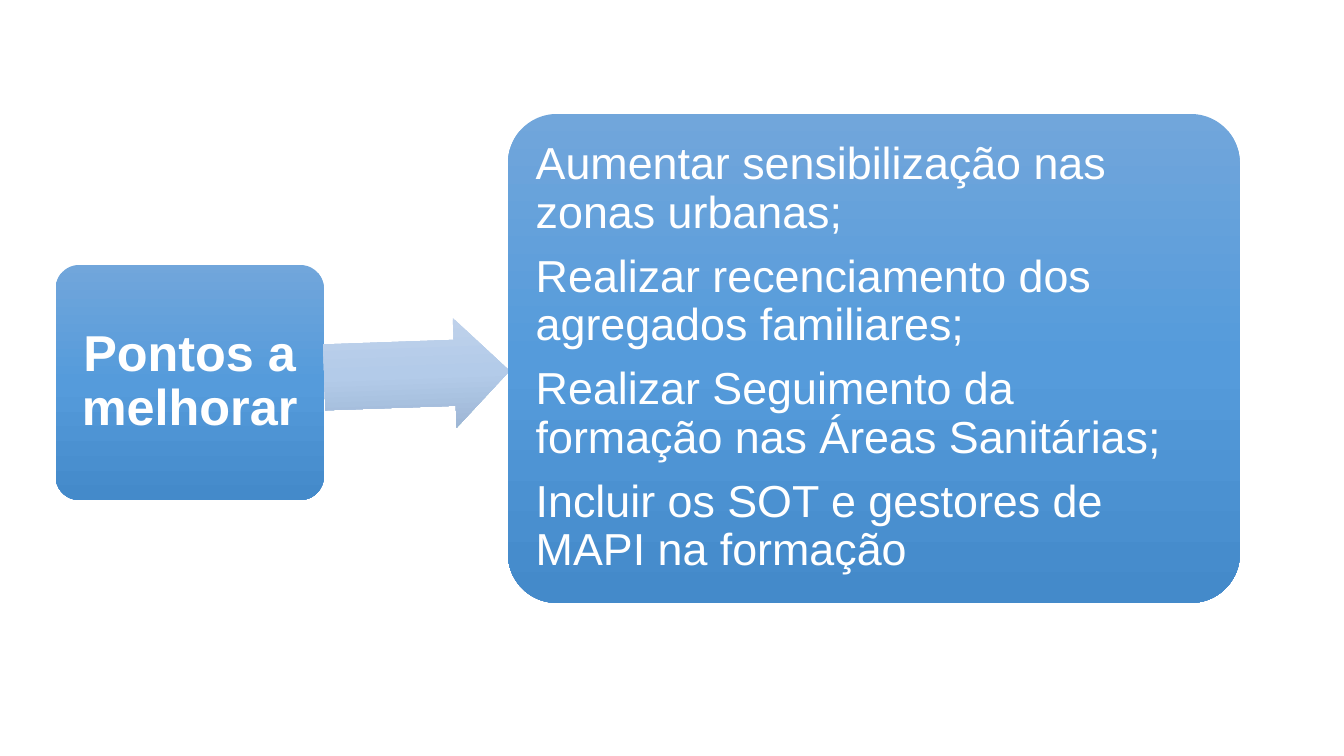
"""Build a slide that leads from a heading box to the points to improve."""
from copy import deepcopy

from pptx import Presentation
from pptx.dml.color import RGBColor
from pptx.enum.shapes import MSO_SHAPE
from pptx.enum.text import MSO_ANCHOR, PP_ALIGN
from pptx.oxml.ns import qn
from pptx.util import Pt

WHITE = RGBColor(0xFF, 0xFF, 0xFF)
BLUES = (RGBColor(0x71, 0xA6, 0xDB), RGBColor(0x55, 0x9B, 0xDB), RGBColor(0x44, 0x8A, 0xCA))
PALES = (RGBColor(0xC0, 0xD2, 0xEB), RGBColor(0xB3, 0xCB, 0xE9), RGBColor(0x9B, 0xB4, 0xD3))
POINTS = (
    "Aumentar sensibilização nas zonas urbanas;",
    "Realizar recenciamento dos agregados familiares;",
    "Realizar Seguimento da formação nas Áreas Sanitárias;",
    "Incluir os SOT e gestores de MAPI na formação",
)


def write(frame, lines, size, inset, bold=False, align=PP_ALIGN.LEFT):
    """Fill a text frame with one paragraph per line."""
    frame.word_wrap = True
    frame.vertical_anchor = MSO_ANCHOR.MIDDLE
    frame.margin_left = frame.margin_right = Pt(inset)
    frame.margin_top = frame.margin_bottom = Pt(inset)
    for i, line in enumerate(lines):
        para = frame.add_paragraph() if i else frame.paragraphs[0]
        para.alignment = align
        para.line_spacing = 0.9
        para.space_after = Pt(0.35 * size)
        run = para.add_run()
        run.text = line
        font = run.font
        font.name, font.size, font.bold = "Arial", Pt(size), bold
        font.color.rgb = WHITE


class Deck:
    """Hold the slide and the shared style of its shapes."""

    def __init__(self, slide):
        """Keep the current slide."""
        self.slide = slide

    def shape(self, kind, area, tones, adjust):
        """Add a borderless shape with a downward gradient."""
        item = self.slide.shapes.add_shape(kind, *map(Pt, area))
        item.shadow.inherit = False
        item.line.fill.background()
        for i, value in enumerate(adjust):
            item.adjustments[i] = value
        fill = item.fill
        fill.gradient()
        fill.gradient_angle = 270
        stops = item._element.spPr.find(qn("a:gradFill")).find(qn("a:gsLst"))
        stops.append(deepcopy(stops[-1]))
        for i, (stop, tone) in enumerate(zip(fill.gradient_stops, tones)):
            stop.position = i / 2
            stop.color.rgb = tone
        return item

    def box(self, area, lines, **style):
        """Add a rounded blue box with text."""
        item = self.shape(MSO_SHAPE.ROUNDED_RECTANGLE, area, BLUES, [0.1])
        write(item.text_frame, lines, **style)

    def arrow(self, area, turn):
        """Add a pale block arrow."""
        item = self.shape(MSO_SHAPE.RIGHT_ARROW, area, PALES, [0.6, 0.5])
        item.rotation = turn


def main():
    """Draw the slide and save it."""
    prs = Presentation()
    prs.slide_width, prs.slide_height = Pt(960), Pt(540)
    deck = Deck(prs.slides.add_slide(prs.slide_layouts[6]))
    deck.box((39.8, 189.3, 191.5, 167.8), ["Pontos a melhorar"],
             size=36, inset=10.8, bold=True, align=PP_ALIGN.CENTER)
    deck.arrow((231.6, 228, 132.5, 78.5), 358)
    deck.box((362.9, 81.4, 522.7, 349.2), POINTS, size=32, inset=9.6)
    prs.save("out.pptx")


if __name__ == "__main__":
    main()
